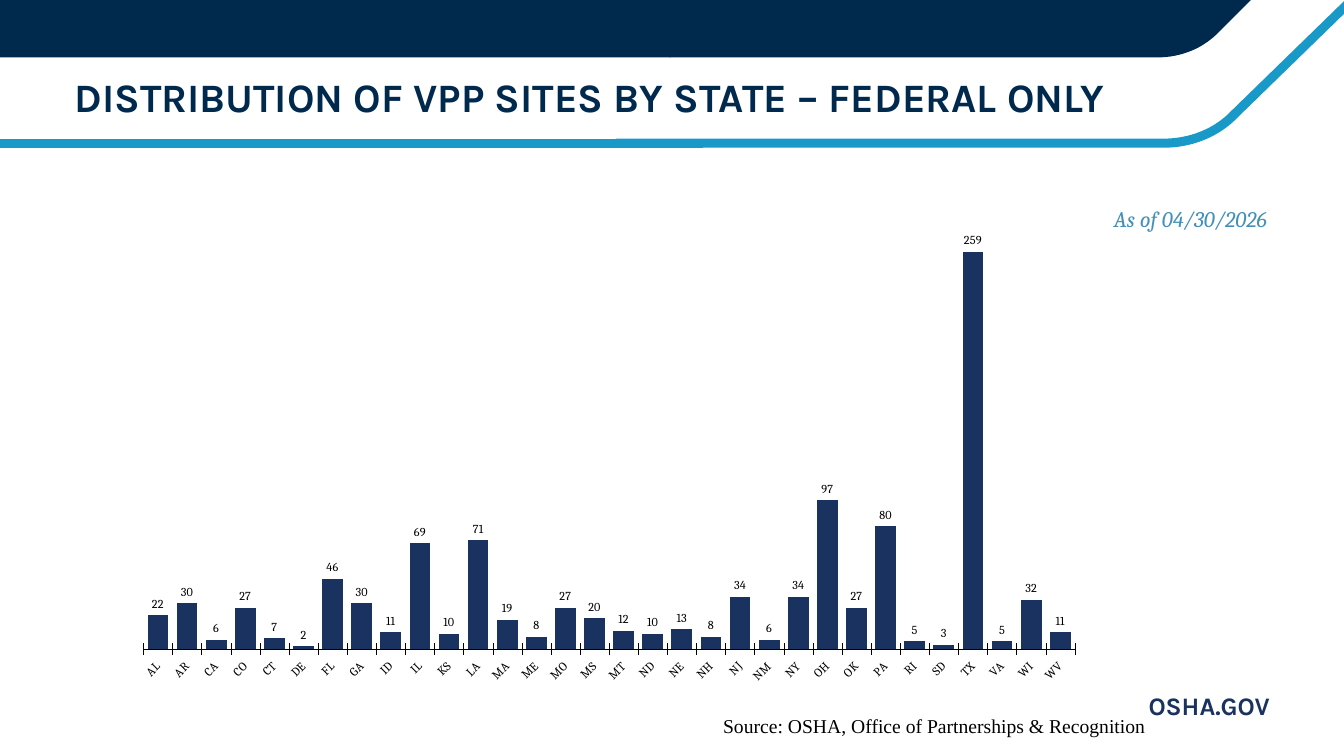
from dataclasses import dataclass

from lxml import etree
from pptx import Presentation, util as u
from pptx.chart.data import CategoryChartData
from pptx.dml.color import RGBColor as Rgb
from pptx.enum import chart as ch, shapes as sh, text as t
from pptx.oxml import parse_xml
from pptx.oxml.ns import nsdecls, qn

COLS, ROWS = 133.33, 75
CELL = u.Inches(0.1)


@dataclass(frozen=True)
class Theme:
    navy: str = "00294E"
    bar: str = "1A3260"
    sky: str = "1999C8"
    date: str = "4590B8"
    ink: str = "000000"
    head: str = "Karla"
    body: str = "Cambria"
    note: str = "Times New Roman"
    title: float = 28.8
    site: float = 18
    stamp: float = 16
    source: float = 14
    label: float = 8.7
    rule: float = 6.5
    seam: float = 5.5


LOOK = Theme()
SITES = {
    "AL": 22, "AR": 30, "CA": 6, "CO": 27, "CT": 7, "DE": 2, "FL": 46, "GA": 30,
    "ID": 11, "IL": 69, "KS": 10, "LA": 71, "MA": 19, "ME": 8, "MO": 27, "MS": 20,
    "MT": 12, "ND": 10, "NE": 13, "NH": 8, "NJ": 34, "NM": 6, "NY": 34, "OH": 97,
    "OK": 27, "PA": 80, "RI": 5, "SD": 3, "TX": 259, "VA": 5, "WI": 32, "WV": 11,
}


def grid(*cells):
    return [round(c * CELL) for c in cells]


def curve(a, b, c, d, steps=16):
    """Points along a cubic curve from a to d, with handles b and c."""
    marks = [n / steps for n in range(steps + 1)]
    return [
        tuple((1 - m) ** 3 * p + 3 * (1 - m) ** 2 * m * q
              + 3 * (1 - m) * m ** 2 * r + m ** 3 * s
              for p, q, r, s in zip(a, b, c, d))
        for m in marks
    ]


def outline(slide, points, close):
    spots = [grid(*p) for p in points]
    pen = slide.shapes.build_freeform(*spots[0], scale=1.0)
    pen.add_line_segments(spots[1:], close=close)
    shape = pen.convert_to_shape()
    shape.shadow.inherit = False
    return shape


def paint(shape):
    shape.shadow.inherit = False
    shape.fill.solid()
    shape.fill.fore_color.rgb = Rgb.from_string(LOOK.navy)
    shape.line.fill.background()


def stroke(line, width):
    line.color.rgb = Rgb.from_string(LOOK.sky)
    line.width = u.Pt(width)


def band(slide):
    bend = curve((121, 3.1), (119.4, 4.8), (117.2, 5.7), (114.8, 5.7))
    paint(outline(slide, [(66.4, 0), (124.1, 0), *bend, (66.4, 5.7)], True))
    for left, wide, high in ((0, 66.5, 5.7), (63.6, 5.4, 5.5)):
        box = grid(left, 0, wide, high)
        paint(slide.shapes.add_shape(sh.MSO_SHAPE.RECTANGLE, *box))


def level(slide, start, end, row, width):
    ends = grid(start, row, end, row)
    line = slide.shapes.add_connector(sh.MSO_CONNECTOR.STRAIGHT, *ends)
    etree.SubElement(line._element.spPr, qn("a:effectLst"))
    stroke(line.line, width)


def rule(slide):
    bend = curve((122.5, 11.3), (120.7, 13.2), (118.1, 14.2), (115.5, 14.2))
    shape = outline(slide, [(134.1, 0), *bend, (61.1, 14.2)], False)
    shape.fill.background()
    stroke(shape.line, LOOK.rule)
    level(slide, 0, 61.1, 14.2, LOOK.rule)


def words(slide, area, copy, face, size, color, align=t.PP_ALIGN.LEFT,
          anchor=t.MSO_ANCHOR.TOP, bold=False, italic=False, wrap=True):
    frame = slide.shapes.add_textbox(*grid(*area)).text_frame
    frame.word_wrap = wrap
    frame.vertical_anchor = anchor
    frame.text = copy
    para = frame.paragraphs[0]
    para.alignment = align
    style(para.runs[0].font, face, size, color)
    para.runs[0].font.bold = bold
    para.runs[0].font.italic = italic


def style(font, face, size, color):
    font.name = face
    font.size = u.Pt(size)
    font.color.rgb = Rgb.from_string(color)


def inner(chart, **box):
    """Fix the inner plot area at shares of the chart's frame."""
    plot = chart._chartSpace.chart.plotArea
    for old in plot.findall(qn("c:layout")):
        plot.remove(old)
    root = parse_xml(f"<c:layout {nsdecls('c')}><c:manualLayout/></c:layout>")
    rows = [("layoutTarget", "inner"), ("xMode", "edge"), ("yMode", "edge")]
    for tag, val in rows + list(box.items()):
        etree.SubElement(root[0], qn(f"c:{tag}")).set("val", str(val))
    plot.insert(0, root)


def columns(slide, area, data):
    table = CategoryChartData()
    table.categories = list(data)
    table.add_series("Series 1", list(data.values()))
    kind = ch.XL_CHART_TYPE.COLUMN_CLUSTERED
    chart = slide.shapes.add_chart(kind, *grid(*area), table).chart
    chart.has_legend = chart.has_title = False
    style(chart.font, LOOK.body, LOOK.label, LOOK.ink)
    inner(chart, x=0.005, y=0.242, w=0.981, h=0.685)

    states = chart.category_axis
    states.major_tick_mark = ch.XL_TICK_MARK.CROSS
    states.format.line.color.rgb = Rgb.from_string(LOOK.ink)
    states.format.line.width = u.Pt(0.22)
    style(states.tick_labels.font, LOOK.body, LOOK.label, LOOK.ink)
    states._element.find(qn("c:txPr")).find(qn("a:bodyPr")).set("rot", "-2700000")

    scale = chart.value_axis
    scale.minimum_scale, scale.maximum_scale = 0, 300
    scale.has_major_gridlines = False
    scale.major_tick_mark = ch.XL_TICK_MARK.NONE
    scale.tick_label_position = ch.XL_TICK_LABEL_POSITION.NONE
    scale.format.line.fill.background()

    plot = chart.plots[0]
    plot.gap_width = 40
    plot.vary_by_categories = False
    fill = plot.series[0].format.fill
    fill.solid()
    fill.fore_color.rgb = Rgb.from_string(LOOK.bar)
    plot.has_data_labels = True
    tags = plot.data_labels
    tags.show_value = True
    tags.position = ch.XL_LABEL_POSITION.OUTSIDE_END
    style(tags.font, LOOK.body, LOOK.label, LOOK.ink)


def main():
    deck = Presentation()
    deck.slide_width, deck.slide_height = grid(COLS, ROWS)
    slide = deck.slides.add_slide(deck.slide_layouts[6])
    mid = t.MSO_ANCHOR.MIDDLE

    words(slide, (60.25, 68, 66.7, 4), "OSHA.GOV", LOOK.head, LOOK.site,
          LOOK.bar, t.PP_ALIGN.RIGHT, bold=True)
    rule(slide)
    band(slide)
    level(slide, 52.5, 69.7, 14.3, LOOK.seam)
    words(slide, (6.4, 6.8, 109, 5.6),
          "DISTRIBUTION OF VPP SITES BY STATE – FEDERAL ONLY",
          LOOK.head, LOOK.title, LOOK.navy, anchor=mid, bold=True)
    columns(slide, (13.75, 2.58, 94.2, 66.7), SITES)
    words(slide, (106.85, 17.9, 22.5, 7.5), "As of 04/30/2026", LOOK.body,
          LOOK.stamp, LOOK.date, t.PP_ALIGN.CENTER, mid, italic=True)
    words(slide, (70.75, 70.3, 44, 3.3),
          "Source: OSHA, Office of Partnerships & Recognition",
          LOOK.note, LOOK.source, LOOK.ink, wrap=False)
    deck.save("out.pptx")


if __name__ == "__main__":
    main()
